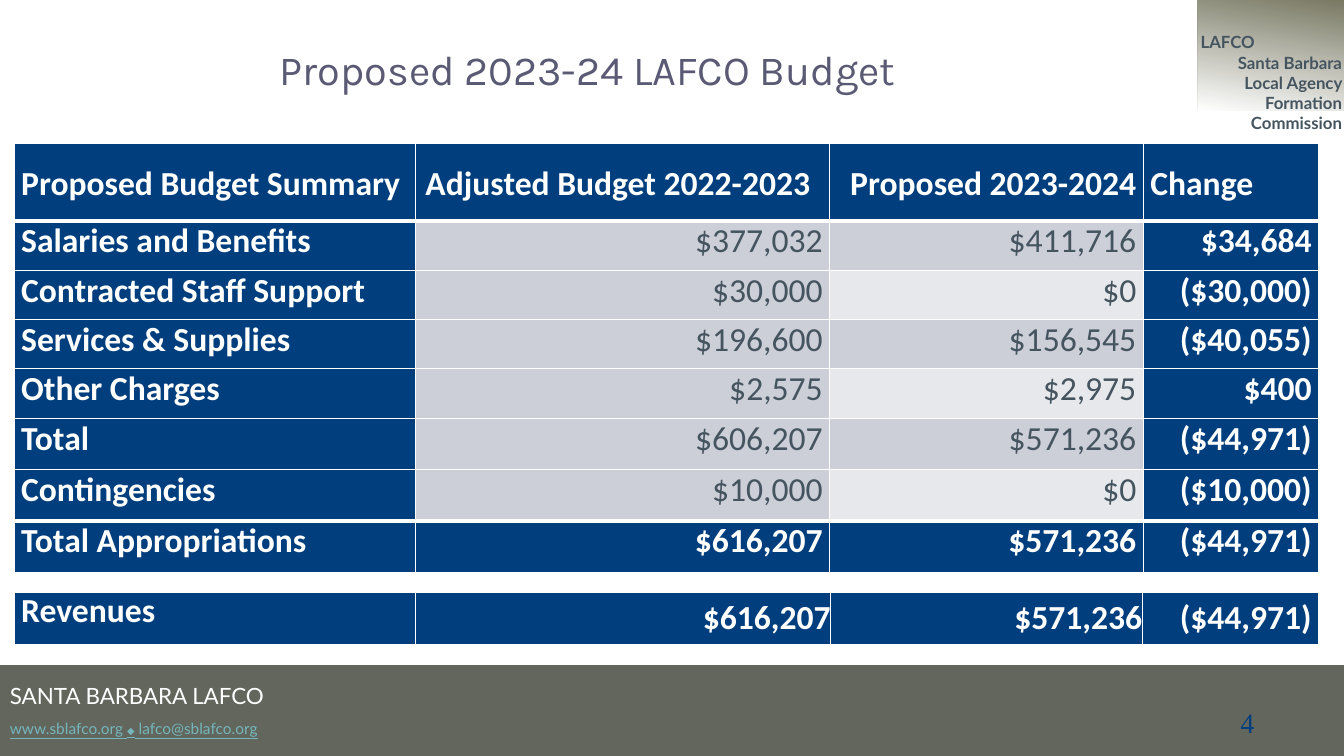
from lxml.etree import SubElement
from pptx import Presentation
from pptx.dml.color import RGBColor
from pptx.enum.shapes import MSO_SHAPE as Shape
from pptx.enum.text import MSO_ANCHOR as Anchor, MSO_AUTO_SIZE as AutoSize, PP_ALIGN as Align
from pptx.oxml.ns import qn
from pptx.util import Emu, Pt

NAVY, WHITE, SLATE = "003E7E", "FFFFFF", "455560"
MID_GREY, PALE_GREY = "CCCED8", "E7E8EC"
colour = RGBColor.from_string


def px(length):
    return Emu(length * 9144)


def add_run(paragraph, text, size, font, hex_colour, bold=False, underline=False):
    run = paragraph.add_run()
    run.text = text
    run.font.size = Pt(size)
    run.font.name = font
    run.font.bold = bold
    run.font.underline = underline
    run.font.color.rgb = colour(hex_colour)


presentation = Presentation()
presentation.slide_width, presentation.slide_height = px(1333), px(750)
slide = presentation.slides.add_slide(presentation.slide_layouts[5])
shapes = slide.shapes

# Title
title = shapes.title
title.left, title.top, title.width, title.height = px(0), px(43), px(1167), px(55)
frame = title.text_frame
frame.auto_size = AutoSize.NONE
frame.vertical_anchor = Anchor.BOTTOM
frame.paragraphs[0].alignment = Align.CENTER
add_run(frame.paragraphs[0], "Proposed 2023-24 LAFCO Budget", 29.6, "Karla", "5A5A75")

# Footer band
footer = shapes.add_shape(Shape.RECTANGLE, px(0), px(660), px(1333), px(90))
footer.shadow.inherit = False
footer.fill.solid()
footer.fill.fore_color.rgb = colour("62665D")
footer.line.fill.background()
frame = footer.text_frame
frame.vertical_anchor = Anchor.MIDDLE
agency, contact = frame.paragraphs[0], frame.add_paragraph()
agency.alignment = contact.alignment = Align.LEFT
agency.space_before = Pt(18)
add_run(agency, "SANTA BARBARA LAFCO", 16, "Lato", WHITE)
for text, size in (("www.sblafco.org ", 11), ("◆", 7), (" lafco@sblafco.org", 11)):
    add_run(contact, text, size, "Lato", "74B6BC", underline=True)
add_run(contact, " ", 18, "Lato", "00B0F0")

# Agency name on a gradient corner
corner = shapes.add_shape(Shape.RECTANGLE, px(1188), px(0), px(145), px(110))
corner.shadow.inherit = False
corner.line.fill.background()
corner.fill.gradient()
corner.fill.gradient_angle = 260
for stop, position, hex_colour in zip(corner.fill.gradient_stops, (0, 1), ("787863", WHITE)):
    stop.position = position
    stop.color.rgb = colour(hex_colour)

frame = shapes.add_textbox(px(1181), px(27), px(160), px(40)).text_frame
frame.word_wrap = True
short_name, full_name = frame.paragraphs[0], frame.add_paragraph()
short_name.alignment, full_name.alignment = Align.JUSTIFY, Align.RIGHT
add_run(short_name, "LAFCO ", 12, "Lato", SLATE, bold=True)
add_run(full_name, "Santa Barbara Local Agency Formation Commission", 12, "Lato", SLATE, bold=True)

# Slide number
frame = shapes.add_textbox(px(1167), px(695), px(87), px(55)).text_frame
frame.word_wrap = True
frame.paragraphs[0].alignment = Align.RIGHT
add_run(frame.paragraphs[0], "4", 20, "Times New Roman", NAVY)

# Budget tables: top, column widths, row heights, rows
HEADER = ("Proposed Budget Summary", "Adjusted Budget 2022-2023", "Proposed 2023-2024", "Change")
TOTALS = ("Total Appropriations", "Revenues")
budget_rows = [
    HEADER,
    ("Salaries and Benefits", "$377,032", "$411,716", "$34,684"),
    ("Contracted Staff Support", "$30,000", "$0", "($30,000)"),
    ("Services & Supplies", "$196,600", "$156,545", "($40,055)"),
    ("Other Charges", "$2,575", "$2,975", "$400"),
    ("Total", "$606,207", "$571,236", "($44,971)"),
    ("Contingencies", "$10,000", "$0", "($10,000)"),
    ("Total Appropriations", "$616,207", "$571,236", "($44,971)"),
]
revenue_rows = [("Revenues", "$616,207", "$571,236", "($44,971)")]
tables = [
    (142, (398, 411, 311, 174), (77, 49, 49, 49, 49, 51, 51, 51), budget_rows),
    (586, (398, 412, 309, 175), (55,), revenue_rows),
]

for top, widths, heights, rows in tables:
    table = shapes.add_table(len(rows), len(widths), px(14), px(top),
                             px(sum(widths)), px(sum(heights))).table
    for column, width in zip(table.columns, widths):
        column.width = px(width)
    for r, (height, values) in enumerate(zip(heights, rows)):
        table.rows[r].height = px(height)
        is_header, is_total = values is HEADER, values[0] in TOTALS
        is_revenue = values[0] == "Revenues"
        for c, text in enumerate(values):
            cell = table.cell(r, c)

            # Borders: heavy under the header and above the totals
            thick = {"T": is_total or r == 1, "B": is_header or is_revenue or r == len(rows) - 2}
            properties = cell._tc.get_or_add_tcPr()
            for side in "LRTB":
                line = SubElement(properties, qn(f"a:ln{side}"),
                                  w=str(Pt(3 if thick.get(side) else 1)))
                fill = SubElement(line, qn("a:solidFill"))
                SubElement(fill, qn("a:srgbClr"), val=WHITE)

            # Fill
            plain = c in (1, 2) and not (is_header or is_total)
            shade = PALE_GREY if c == 2 and r % 2 == 0 else MID_GREY
            cell.fill.solid()
            cell.fill.fore_color.rgb = colour(shade if plain else NAVY)

            # Text
            cell.margin_top = cell.margin_bottom = 0
            cell.margin_left = px(10 if is_header and c == 1 else 7)
            cell.margin_right = px(0 if is_revenue and c in (1, 2) or is_header and c < 2 else 7)
            cell.vertical_anchor = Anchor.MIDDLE if is_revenue and c else Anchor.TOP
            paragraph = cell.text_frame.paragraphs[0]
            left_aligned = c == 0 or is_header and c != 2
            paragraph.alignment = Align.LEFT if left_aligned else Align.RIGHT
            if is_header:
                paragraph.line_spacing = 1.5
                paragraph.space_before = Pt(12)
            else:
                paragraph.space_before = Pt({49: 3, 51: 3.9, 55: 6}[height])
            add_run(paragraph, text, 24, "Calibri", SLATE if plain else WHITE, bold=not plain)

presentation.save("out.pptx")
